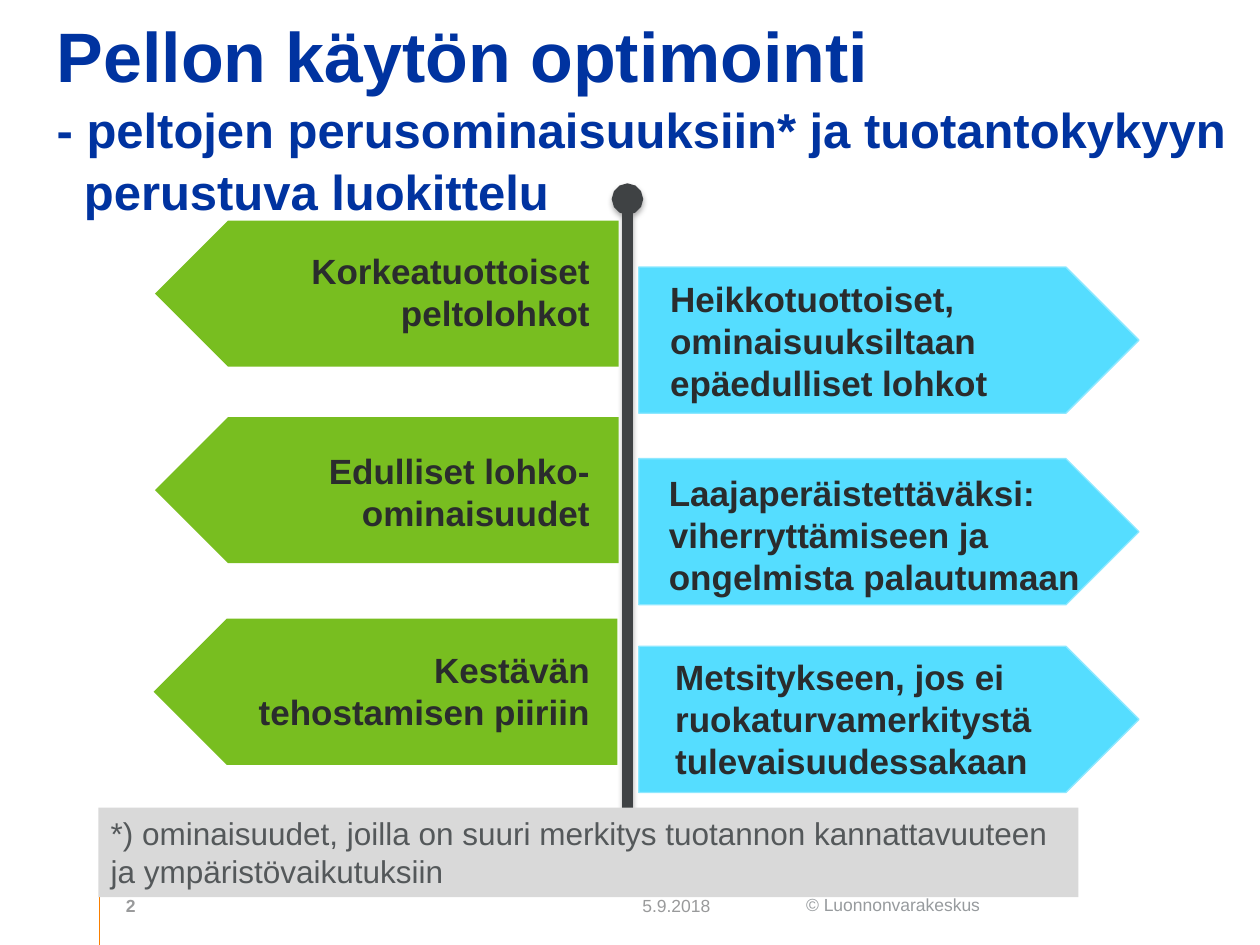
"""Build the signpost slide on optimising field use."""
from dataclasses import dataclass

from lxml.etree import SubElement
from pptx import Presentation
from pptx.dml.color import RGBColor
from pptx.enum.shapes import MSO_CONNECTOR, MSO_SHAPE
from pptx.enum.text import MSO_ANCHOR, MSO_AUTO_SIZE, PP_ALIGN
from pptx.oxml.ns import qn
from pptx.util import Inches, Pt

BLUE = RGBColor(0x00, 0x33, 0xA0)
GREEN = RGBColor(0x78, 0xBE, 0x20)
CYAN = RGBColor(0x55, 0xDD, 0xFF)
EDGE = RGBColor(0x8D, 0xE8, 0xFF)
INK = RGBColor(0x2A, 0x2C, 0x2D)
POLE = RGBColor(0x3F, 0x42, 0x44)
PALE = RGBColor(0xD9, 0xD9, 0xD9)
SLATE = RGBColor(0x54, 0x58, 0x5A)
GREY = RGBColor(0x99, 0x9A, 0x9B)
MIST = RGBColor(0x97, 0x9B, 0x9E)
AMBER = RGBColor(0xF9, 0x7F, 0x00)

COLS, ROWS = 100, 75
WIDE, HIGH = Inches(10), Inches(7.5)
SIGN_ROWS = 11.6


@dataclass(frozen=True)
class Box:
    """A place on the grid, in columns and rows."""
    col: float
    row: float
    cols: float
    rows: float

    def emu(self) -> tuple[int, int, int, int]:
        """Return left, top, width and height."""
        return (across(self.col), down(self.row),
                across(self.cols), down(self.rows))


@dataclass(frozen=True)
class Side:
    """The look shared by the signs on one side of the pole."""
    cols: float
    turn: int
    fill: RGBColor
    edge: RGBColor | None
    align: PP_ALIGN


@dataclass(frozen=True)
class Sign:
    """One arrow sign and its label."""
    side: Side
    col: float
    row: float
    label: Box
    text: str


@dataclass(frozen=True)
class Note:
    """A small text at the foot of the slide."""
    box: Box
    text: str
    color: RGBColor
    bold: bool
    anchor: MSO_ANCHOR


LEFT = Side(36.8, 180, GREEN, None, PP_ALIGN.RIGHT)
RIGHT = Side(39.7, 0, CYAN, EDGE, PP_ALIGN.LEFT)

SIGNS = (
    Sign(LEFT, 12.3, 17.5, Box(18.6, 19.3, 29.2, 7.7),
         "Korkeatuottoiset peltolohkot"),
    Sign(LEFT, 12.3, 33.1, Box(17.4, 35.2, 30.4, 7.7),
         "Edulliset lohko-ominaisuudet"),
    Sign(LEFT, 12.2, 49.1, Box(17.4, 51, 30.4, 7.7),
         "Kestävän tehostamisen piiriin"),
    Sign(RIGHT, 50.7, 21.2, Box(52.2, 21.5, 36.8, 11.1),
         "Heikkotuottoiset, ominaisuuksiltaan epäedulliset lohkot"),
    Sign(RIGHT, 50.7, 36.4, Box(52.1, 36.9, 39.1, 11.1),
         "Laajaperäistettäväksi: viherryttämiseen ja ongelmista palautumaan"),
    Sign(RIGHT, 50.7, 51.3, Box(52.6, 51.5, 34.5, 11.1),
         "Metsitykseen, jos ei ruokaturvamerkitystä tulevaisuudessakaan"),
)

NOTES = (
    Note(Box(63, 70.5, 19.4, 2.7), "© Luonnonvarakeskus", MIST, False,
         MSO_ANCHOR.TOP),
    Note(Box(9, 70.2, 4.9, 3), "2", GREY, True, MSO_ANCHOR.BOTTOM),
    Note(Box(50, 70.2, 12.3, 3), "5.9.2018", GREY, False, MSO_ANCHOR.BOTTOM),
)

HEADS = (
    ("Pellon käytön optimointi", 40, 0),
    ("- peltojen perusominaisuuksiin* ja tuotantokykyyn", 28, 0),
    ("perustuva luokittelu", 28, 2.16),
)


def across(cols: float) -> int:
    """Turn columns into a length."""
    return round(WIDE * cols / COLS)


def down(rows: float) -> int:
    """Turn rows into a length."""
    return round(HIGH * rows / ROWS)


def add_run(para, text: str, size: float, color: RGBColor,
            bold: bool = False) -> None:
    """Add one formatted run to a paragraph."""
    run = para.add_run()
    run.text = text
    font = run.font
    font.name, font.size, font.bold = "Arial", Pt(size), bold
    font.color.rgb = color


def add_text(slide, box: Box, text: str, size: float, color: RGBColor,
             bold: bool, align=PP_ALIGN.LEFT, anchor=MSO_ANCHOR.TOP) -> None:
    """Add a wrapped text box."""
    frame = slide.shapes.add_textbox(*box.emu()).text_frame
    frame.word_wrap = True
    frame.vertical_anchor = anchor
    para = frame.paragraphs[0]
    para.alignment = align
    add_run(para, text, size, color, bold)


def add_shape(slide, kind: MSO_SHAPE, box: Box, fill: RGBColor,
              edge: RGBColor | None = None):
    """Add a flat filled shape."""
    shape = slide.shapes.add_shape(kind, *box.emu())
    shape.shadow.inherit = False
    shape.fill.solid()
    shape.fill.fore_color.rgb = fill
    if edge is None:
        shape.line.fill.background()
    else:
        shape.line.color.rgb = edge
        shape.line.width = Pt(0.75)
    return shape


def add_line(slide, col: float, start: float, end: float,
             color: RGBColor, width: float):
    """Add an upright line and return it with its effect list."""
    line = slide.shapes.add_connector(
        MSO_CONNECTOR.STRAIGHT, across(col), down(start),
        across(col), down(end))
    line.line.color.rgb = color
    line.line.width = Pt(width)
    effects = SubElement(line._element.spPr, qn("a:effectLst"))
    return line, effects


def add_title(slide) -> None:
    """Place and fill the title."""
    title = slide.shapes.title
    title.left, title.top, title.width, title.height = Box(
        3.5, 0.2, 95.6, 11.4).emu()
    frame = title.text_frame
    frame.word_wrap = True
    frame.auto_size = MSO_AUTO_SIZE.NONE
    frame.vertical_anchor = MSO_ANCHOR.TOP
    for count, (text, size, indent) in enumerate(HEADS):
        para = frame.add_paragraph() if count else frame.paragraphs[0]
        para.alignment = PP_ALIGN.LEFT
        para.line_spacing = 1.05
        para.space_before = Pt(0)
        para._p.get_or_add_pPr().set("marL", str(across(indent)))
        add_run(para, text, size, BLUE, True)


def add_pole(slide) -> None:
    """Add the pole with its round top and soft shadow."""
    pole, effects = add_line(slide, 49.8, 65, 15.8, POLE, 6)
    SubElement(pole.line._get_or_add_ln(), qn("a:tailEnd"), type="oval")
    shade = SubElement(effects, qn("a:outerShdw"), blurRad=str(Pt(3.1)),
                       dist=str(Pt(1.8)), dir="5400000", rotWithShape="0")
    tint = SubElement(shade, qn("a:srgbClr"), val="000000")
    SubElement(tint, qn("a:alpha"), val="35000")


def add_sign(slide, sign: Sign) -> None:
    """Add an arrow sign."""
    side = sign.side
    box = Box(sign.col, sign.row, side.cols, SIGN_ROWS)
    shape = add_shape(slide, MSO_SHAPE.PENTAGON, box, side.fill, side.edge)
    shape.rotation = side.turn
    add_text(slide, sign.label, sign.text, 20, INK, True, side.align)


def add_key(slide) -> None:
    """Add the grey panel that explains the asterisk."""
    panel = add_shape(slide, MSO_SHAPE.RECTANGLE,
                      Box(7.8, 64.1, 77.8, 7.1), PALE)
    frame = panel.text_frame
    frame.word_wrap = False
    frame.vertical_anchor = MSO_ANCHOR.TOP
    para = frame.paragraphs[0]
    para.alignment = PP_ALIGN.LEFT
    add_run(para, "*) ominaisuudet, joilla on suuri merkitys tuotannon "
            "kannattavuuteen", 18, SLATE)
    para.add_line_break()
    add_run(para, "ja ympäristövaikutuksiin", 18, SLATE)


def main() -> None:
    """Build and save the slide."""
    deck = Presentation()
    deck.slide_width, deck.slide_height = WIDE, HIGH
    slide = deck.slides.add_slide(deck.slide_layouts[5])
    add_title(slide)
    add_line(slide, 7.9, 70.4, ROWS, AMBER, 1)
    for note in NOTES:
        add_text(slide, note.box, note.text, 10, note.color, note.bold,
                 anchor=note.anchor)
    add_pole(slide)
    for sign in SIGNS:
        add_sign(slide, sign)
    add_key(slide)
    deck.save("out.pptx")


if __name__ == "__main__":
    main()
